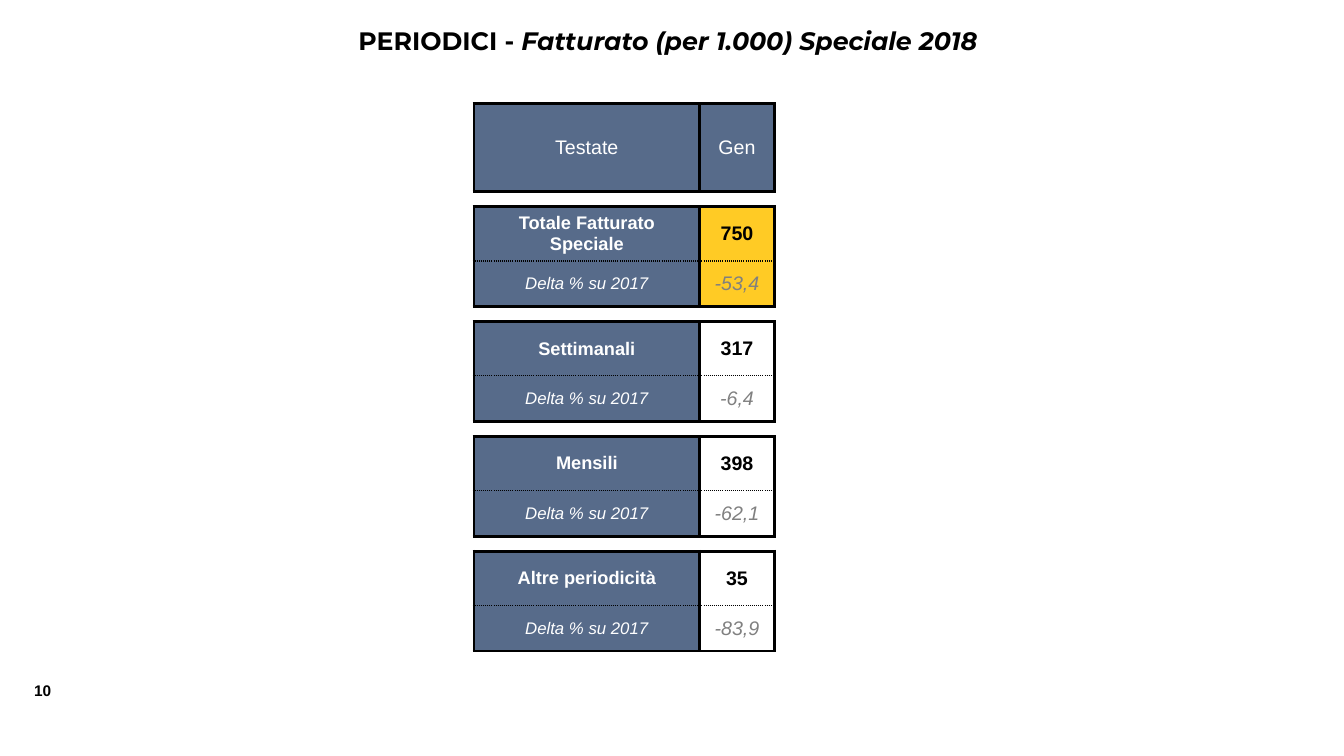
from dataclasses import dataclass

from lxml import etree
from pptx import Presentation
from pptx.dml.color import RGBColor
from pptx.enum.text import MSO_ANCHOR, MSO_AUTO_SIZE, PP_ALIGN
from pptx.oxml.ns import qn
from pptx.util import Inches, Pt

CENTER, LEFT = PP_ALIGN.CENTER, PP_ALIGN.LEFT
MIDDLE = MSO_ANCHOR.MIDDLE
GROW = MSO_AUTO_SIZE.SHAPE_TO_FIT_TEXT

# The slide is a fine grid of square modules
GRID_COLUMNS, GRID_ROWS = 1333, 750
MODULE = Inches(0.01)


@dataclass(frozen=True)
class Theme:
    title_font: str = "Montserrat"
    body_font: str = "Arial"
    black: str = "000000"
    white: str = "FFFFFF"
    slate: str = "576B8A"
    yellow: str = "FFCB25"
    grey: str = "808080"
    title_size: float = 18
    value_size: float = 14
    name_size: float = 13
    delta_size: float = 12
    number_size: float = 11
    gap_size: float = 1
    frame_width: float = 2.25
    dotted_width: float = 1


THEME = Theme()
FRAME = (THEME.frame_width, "solid")
DOTTED = (THEME.dotted_width, "sysDot")

COLUMN_WIDTHS = (224, 74)
HEADER_HEIGHT, GAP_HEIGHT, NAME_HEIGHT, DELTA_HEIGHT = 87, 15, 54, 45
LABEL_MARGINS = (10, 5)
NO_MARGINS = (0, 0)

DELTA_LABEL = "Delta % su 2017"
PERIODICALS = [
    ("Totale Fatturato Speciale", "750", "-53,4", THEME.yellow),
    ("Settimanali", "317", "-6,4", THEME.white),
    ("Mensili", "398", "-62,1", THEME.white),
    ("Altre periodicità", "35", "-83,9", THEME.white),
]


def style_font(font, family, size, color, bold=False, italic=False):
    font.name, font.size = family, Pt(size)
    font.bold, font.italic = bold, italic
    font.color.rgb = RGBColor.from_string(color)


def add_line(slide, box, wrap, align):
    """Add a one-line text box and return its paragraph."""
    frame = slide.shapes.add_textbox(*(n * MODULE for n in box)).text_frame
    frame.word_wrap = wrap
    frame.auto_size = GROW
    paragraph = frame.paragraphs[0]
    paragraph.alignment = align
    return paragraph


def add_title(slide, box):
    paragraph = add_line(slide, box, True, CENTER)
    style_font(paragraph.font, THEME.title_font, THEME.title_size, THEME.black, bold=True)
    paragraph.add_run().text = "PERIODICI - "
    measure = paragraph.add_run()
    measure.text = "Fatturato (per 1.000) Speciale 2018"
    measure.font.italic = True


def add_page_number(slide, box):
    paragraph = add_line(slide, box, False, LEFT)
    paragraph.text = "10"
    style_font(paragraph.font, THEME.body_font, THEME.number_size, THEME.black, bold=True)


def set_borders(cell, sides, top, bottom):
    """Draw each edge as (width, dash), or leave it out when None."""
    properties = cell._tc.get_or_add_tcPr()
    edges = (("a:lnL", sides), ("a:lnR", sides), ("a:lnT", top), ("a:lnB", bottom))
    for position, (tag, edge) in enumerate(edges):
        line = etree.Element(qn(tag))
        if edge is None:
            etree.SubElement(line, qn("a:noFill"))
        else:
            width, dash = edge
            line.set("w", str(Pt(width)))
            fill = etree.SubElement(line, qn("a:solidFill"))
            etree.SubElement(fill, qn("a:srgbClr")).set("val", THEME.black)
            etree.SubElement(line, qn("a:prstDash")).set("val", dash)
        properties.insert(position, line)


def fill_cell(cell, text, fill, margins, size, color, bold=False, italic=False):
    cell.fill.solid()
    cell.fill.fore_color.rgb = RGBColor.from_string(fill)
    cell.margin_left = cell.margin_right = margins[0] * MODULE
    cell.margin_top = cell.margin_bottom = margins[1] * MODULE
    cell.vertical_anchor = MIDDLE
    paragraph = cell.text_frame.paragraphs[0]
    paragraph.text = text
    paragraph.alignment = CENTER
    style_font(paragraph.font, THEME.body_font, size, color, bold, italic)


def fill_header(row):
    for cell, heading in zip(row.cells, ("Testate", "Gen")):
        fill_cell(cell, heading, THEME.slate, LABEL_MARGINS, THEME.value_size, THEME.white)
        set_borders(cell, FRAME, FRAME, FRAME)


def fill_gap(row):
    for cell in row.cells:
        fill_cell(cell, "", THEME.white, NO_MARGINS, THEME.gap_size, THEME.black)
        set_borders(cell, None, FRAME, FRAME)


def fill_periodical(name_row, delta_row, name, revenue, delta, value_fill):
    name_cell, revenue_cell = name_row.cells
    delta_label_cell, delta_cell = delta_row.cells
    fill_cell(name_cell, name, THEME.slate, LABEL_MARGINS,
              THEME.name_size, THEME.white, bold=True)
    fill_cell(revenue_cell, revenue, value_fill, NO_MARGINS,
              THEME.value_size, THEME.black, bold=True)
    fill_cell(delta_label_cell, DELTA_LABEL, THEME.slate, LABEL_MARGINS,
              THEME.delta_size, THEME.white, italic=True)
    fill_cell(delta_cell, delta, value_fill, NO_MARGINS,
              THEME.value_size, THEME.grey, italic=True)
    for cell in (name_cell, revenue_cell):
        set_borders(cell, FRAME, FRAME, DOTTED)
    for cell in (delta_label_cell, delta_cell):
        set_borders(cell, FRAME, DOTTED, FRAME)


def add_revenue_table(slide, left, top):
    group = [GAP_HEIGHT, NAME_HEIGHT, DELTA_HEIGHT]
    heights = [HEADER_HEIGHT] + group * len(PERIODICALS)
    box = (left, top, sum(COLUMN_WIDTHS), sum(heights))
    table = slide.shapes.add_table(
        len(heights), len(COLUMN_WIDTHS), *(n * MODULE for n in box)).table
    table.first_row = table.horz_banding = False
    for column, width in zip(table.columns, COLUMN_WIDTHS):
        column.width = width * MODULE
    for row, height in zip(table.rows, heights):
        row.height = height * MODULE

    fill_header(table.rows[0])
    for index, periodical in enumerate(PERIODICALS):
        first = 1 + index * len(group)
        fill_gap(table.rows[first])
        fill_periodical(table.rows[first + 1], table.rows[first + 2], *periodical)


def main():
    deck = Presentation()
    deck.slide_width = GRID_COLUMNS * MODULE
    deck.slide_height = GRID_ROWS * MODULE
    slide = deck.slides.add_slide(deck.slide_layouts[6])
    add_page_number(slide, (24, 671, 42, 29))
    add_title(slide, (190, 20, 945, 40))
    add_revenue_table(slide, 470, 103)
    deck.save("out.pptx")


if __name__ == "__main__":
    main()
